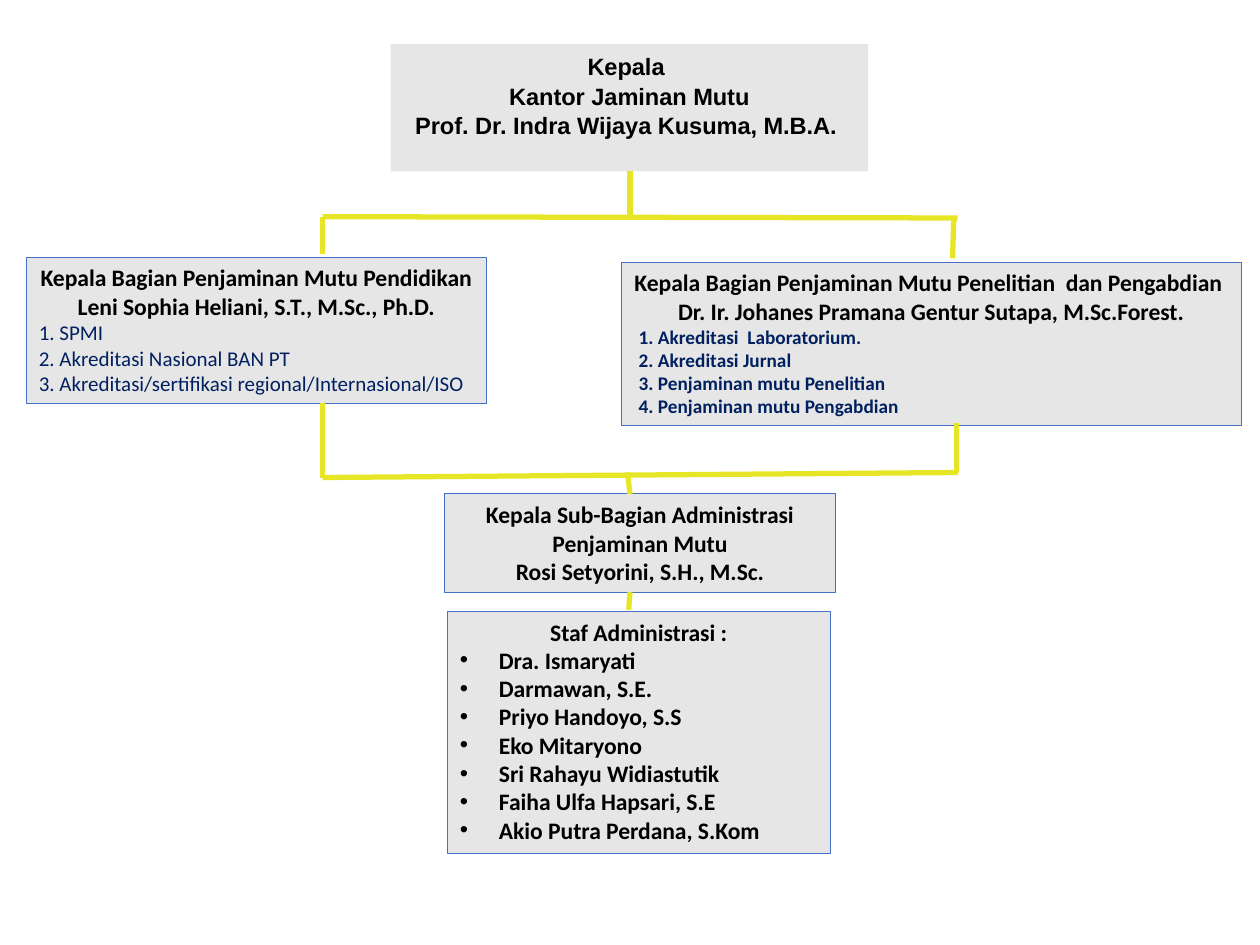
from dataclasses import dataclass
from lxml.etree import SubElement
from pptx import Presentation
from pptx.dml.color import RGBColor
from pptx.enum.shapes import MSO_CONNECTOR as Connector, MSO_SHAPE as Shape
from pptx.enum.text import MSO_ANCHOR as Anchor, MSO_AUTO_SIZE as AutoSize, PP_ALIGN as Align
from pptx.oxml.ns import qn
from pptx.util import Inches, Pt

GREY = RGBColor(0xE7, 0xE6, 0xE6)
BLUE = RGBColor(0x44, 0x72, 0xC4)
NAVY = RGBColor(0x00, 0x20, 0x60)
BLACK = RGBColor(0, 0, 0)
YELLOW = RGBColor(0xE6, 0xE6, 0x26)

COLUMNS, ROWS = 100, 75


@dataclass
class Level:
    """Look of one kind of paragraph."""
    size: float = 13.5
    color: RGBColor = BLACK
    bold: bool = True
    align: Align = Align.CENTER
    font: str = "Calibri"
    spacing: float = 1.0
    margin: float = 0
    bullet: str = ""


HEAD = Level(font="Arial", spacing=1.05)
UNIT = Level()
TASK = Level(12, NAVY, False, Align.LEFT)
BOLD_TASK = Level(11, NAVY, True, Align.LEFT, margin=0.04)
STAFF = Level(align=Align.LEFT, margin=0.31, bullet="•")


class OrgChart:
    """Draws on one slide, with lengths in columns and rows of its grid."""

    def __init__(self):
        self.deck = Presentation()
        self.deck.slide_width, self.deck.slide_height = Inches(10), Inches(7.5)
        self.slide = self.deck.slides.add_slide(self.deck.slide_layouts[1])
        self.title, self.body = self.slide.placeholders

    def x(self, columns):
        return round(self.deck.slide_width * columns / COLUMNS)

    def y(self, rows):
        return round(self.deck.slide_height * rows / ROWS)

    def box(self, area, groups, holder=None, outline=BLUE):
        """Grey box; groups pairs each level with its lines of text."""
        left, top, width, height = area
        if holder is None:
            holder = self.slide.shapes.add_shape(Shape.RECTANGLE, 0, 0, 0, 0)
            holder.shadow.inherit = False
        holder.left, holder.top = self.x(left), self.y(top)
        holder.width, holder.height = self.x(width), self.y(height)
        holder.fill.solid()
        holder.fill.fore_color.rgb = GREY
        if outline is None:
            holder.line.fill.background()
        else:
            holder.line.color.rgb = outline
            holder.line.width = Pt(0.5)

        frame = holder.text_frame
        frame.word_wrap = True
        frame.auto_size = AutoSize.NONE
        frame.vertical_anchor = Anchor.TOP
        lines = [(level, line) for level, group in groups for line in group]
        frame.text = "\n".join(line for _, line in lines)
        for paragraph, (level, _) in zip(frame.paragraphs, lines):
            self.format(paragraph, level)

    def format(self, paragraph, level):
        paragraph.alignment = level.align
        paragraph.line_spacing = level.spacing
        paragraph.space_before = Pt(0)
        properties = paragraph._p.get_or_add_pPr()
        properties.set("marL", str(Inches(level.margin)))
        properties.set("indent", str(-Inches(level.margin) if level.bullet else 0))
        if level.bullet:
            SubElement(properties, qn("a:buFont"), typeface="Arial")
            SubElement(properties, qn("a:buChar"), char=level.bullet)
        else:
            SubElement(properties, qn("a:buNone"))
        for run in paragraph.runs:
            run.font.name = level.font
            run.font.size = Pt(level.size)
            run.font.bold = level.bold
            run.font.color.rgb = level.color

    def link(self, x1, y1, x2, y2):
        line = self.slide.shapes.add_connector(
            Connector.STRAIGHT, self.x(x1), self.y(y1), self.x(x2), self.y(y2))
        line.line.color.rgb = YELLOW
        line.line.width = Pt(3)
        SubElement(line._element.spPr, qn("a:effectLst"))


def main():
    chart = OrgChart()

    # Head of the office
    chart.box((31, 3.5, 37.9, 10.1), [
        (HEAD, ["Kepala ", "Kantor Jaminan Mutu",
                "Prof. Dr. Indra Wijaya Kusuma, M.B.A. "]),
    ], chart.title, outline=None)

    # Two divisions
    chart.box((2.1, 20.4, 36.5, 11.6), [
        (UNIT, ["Kepala Bagian Penjaminan Mutu Pendidikan",
                "Leni Sophia Heliani, S.T., M.Sc., Ph.D."]),
        (TASK, ["1. SPMI", "2. Akreditasi Nasional BAN PT",
                "3. Akreditasi/sertifikasi regional/Internasional/ISO"]),
    ])
    chart.box((49.3, 20.8, 49.2, 13), [
        (UNIT, ["Kepala Bagian Penjaminan Mutu Penelitian  dan Pengabdian ",
                "Dr. Ir. Johanes Pramana Gentur Sutapa, M.Sc.Forest."]),
        (BOLD_TASK, ["1. Akreditasi  Laboratorium.", "2. Akreditasi Jurnal",
                     "3. Penjaminan mutu Penelitian",
                     "4. Penjaminan mutu Pengabdian"]),
    ])

    # Administration and its staff
    chart.box((35.3, 39.2, 31, 7.8), [
        (UNIT, ["Kepala Sub-Bagian Administrasi Penjaminan Mutu",
                "Rosi Setyorini, S.H., M.Sc."]),
    ])
    chart.box((35.5, 48.5, 30.4, 19.2), [
        (UNIT, ["Staf Administrasi :"]),
        (STAFF, ["Dra. Ismaryati", "Darmawan, S.E.", "Priyo Handoyo, S.S",
                 "Eko Mitaryono", "Sri Rahayu Widiastutik",
                 "Faiha Ulfa Hapsari, S.E", "Akio Putra Perdana, S.Kom"]),
    ], chart.body)

    # Links from the head down to the divisions
    left, middle, right = 25.6, 50, 76
    chart.link(left, 17.2, right, 17.3)
    chart.link(middle, 13.6, middle, 17.2)
    chart.link(75.7, 17.3, 75.6, 20.5)
    chart.link(left, 17.2, left, 20.2)

    # Links from the divisions down to the staff
    chart.link(left, 32, left, 37.9)
    chart.link(75.9, 37.5, 75.9, 33.6)
    chart.link(left, 37.9, right, 37.5)
    chart.link(49.8, 37.5, middle, 39.2)
    chart.link(middle, 47, 49.9, 48.4)

    chart.deck.save("out.pptx")


if __name__ == "__main__":
    main()
